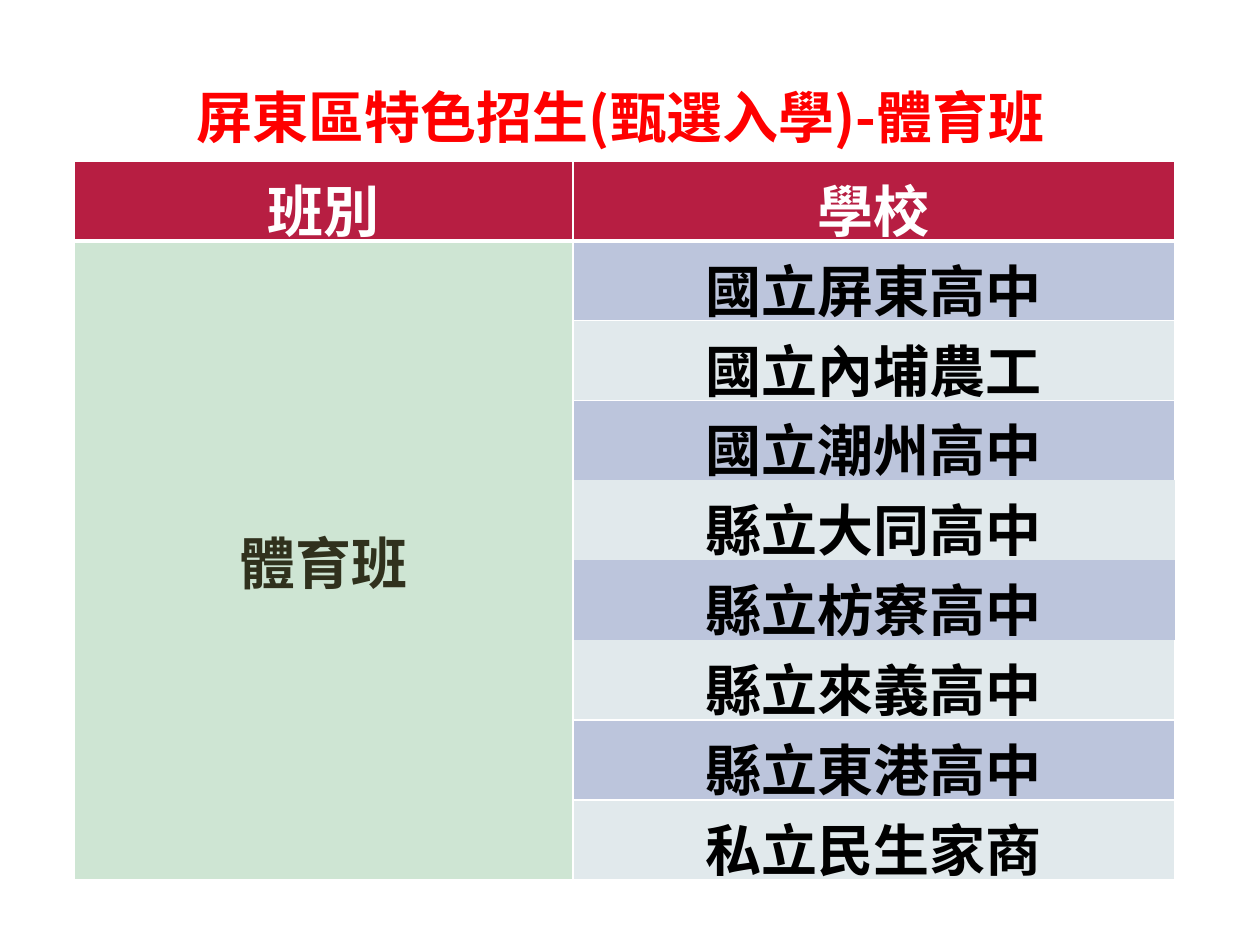
from pptx import Presentation
from pptx.dml.color import RGBColor
from pptx.enum.text import MSO_ANCHOR, PP_ALIGN
from pptx.oxml.ns import qn
from pptx.util import Pt
from lxml.etree import SubElement

SCALE = 7257
FONT = "Noto Sans CJK SC"
COLORS = {
    "title": "FF0000",
    "header": "B71E42",
    "group": "CEE5D3",
    "odd": "BCC5DC",
    "even": "E1E9EC",
    "white": "FFFFFF",
    "olive": "30311D",
    "black": "000000",
}
HEADERS = ["班別", "學校"]
GROUP = "體育班"
SCHOOLS = [
    "國立屏東高中",
    "國立內埔農工",
    "國立潮州高中",
    "縣立大同高中",
    "縣立枋寮高中",
    "縣立來義高中",
    "縣立東港高中",
    "私立民生家商",
]
BORDERLESS_ROWS = {4, 5}


def px(length):
    return length * SCALE


def format_text(frame, color, align):
    para = frame.paragraphs[0]
    para.alignment = align
    for span in para.runs:
        span.font.name = FONT
        span.font.size = Pt(32)
        span.font.bold = True
        span.font.color.rgb = RGBColor.from_string(COLORS[color])


def set_borders(cell, widths):
    properties = cell._tc.get_or_add_tcPr()
    for position, side in enumerate(("lnL", "lnR", "lnT", "lnB")):
        width = widths.get(side, 0)
        line = properties.makeelement(qn(f"a:{side}"), {"w": str(Pt(width))})
        if width:
            fill = SubElement(line, qn("a:solidFill"))
            SubElement(fill, qn("a:srgbClr"), val=COLORS["white"])
        else:
            SubElement(line, qn("a:noFill"))
        properties.insert(position, line)


def fill_cell(cell, text, fill, color, borders):
    cell.text_frame.text = text
    cell.vertical_anchor = MSO_ANCHOR.MIDDLE
    cell.fill.solid()
    cell.fill.fore_color.rgb = RGBColor.from_string(COLORS[fill])
    format_text(cell.text_frame, color, PP_ALIGN.CENTER)
    set_borders(cell, borders)


def school_borders(row):
    if row in BORDERLESS_ROWS:
        return {}
    borders = {"lnL": 1, "lnR": 1}
    if row - 1 not in BORDERLESS_ROWS:
        borders["lnT"] = 3 if row == 1 else 1
    if row + 1 not in BORDERLESS_ROWS:
        borders["lnB"] = 1
    return borders


def add_title(slide, left, top, width, height):
    box = slide.shapes.add_textbox(px(left), px(top), px(width), px(height))
    frame = box.text_frame
    frame.word_wrap = True
    frame.text = "屏東區特色招生(甄選入學)-體育班"
    format_text(frame, "title", PP_ALIGN.LEFT)


def add_school_table(slide, left, top, width, height):
    count = len(SCHOOLS) + 1
    graphic = slide.shapes.add_table(
        count, 2, px(left), px(top), px(width), px(height)
    )
    table = graphic.table
    table.first_row = False
    table.horz_banding = False
    first_width = 499
    table.columns[0].width = px(first_width)
    table.columns[1].width = px(width - first_width)
    for row in table.rows:
        row.height = px(height) // count
    for column, header in enumerate(HEADERS):
        borders = {"lnL": 1, "lnR": 1, "lnT": 1, "lnB": 3}
        fill_cell(table.cell(0, column), header, "header", "white", borders)
    group = table.cell(1, 0)
    group.merge(table.cell(count - 1, 0))
    borders = {"lnL": 1, "lnR": 1, "lnT": 3, "lnB": 1}
    fill_cell(group, GROUP, "group", "olive", borders)
    for row, school in enumerate(SCHOOLS, 1):
        fill = "odd" if row % 2 else "even"
        fill_cell(table.cell(row, 1), school, fill, "black", school_borders(row))


def main():
    deck = Presentation()
    deck.slide_width = px(1260)
    deck.slide_height = px(945)
    slide = deck.slides.add_slide(deck.slide_layouts[6])
    add_title(slide, 184, 76, 1181, 80)
    add_school_table(slide, 74, 161, 1101, 718)
    deck.save("out.pptx")


if __name__ == "__main__":
    main()
